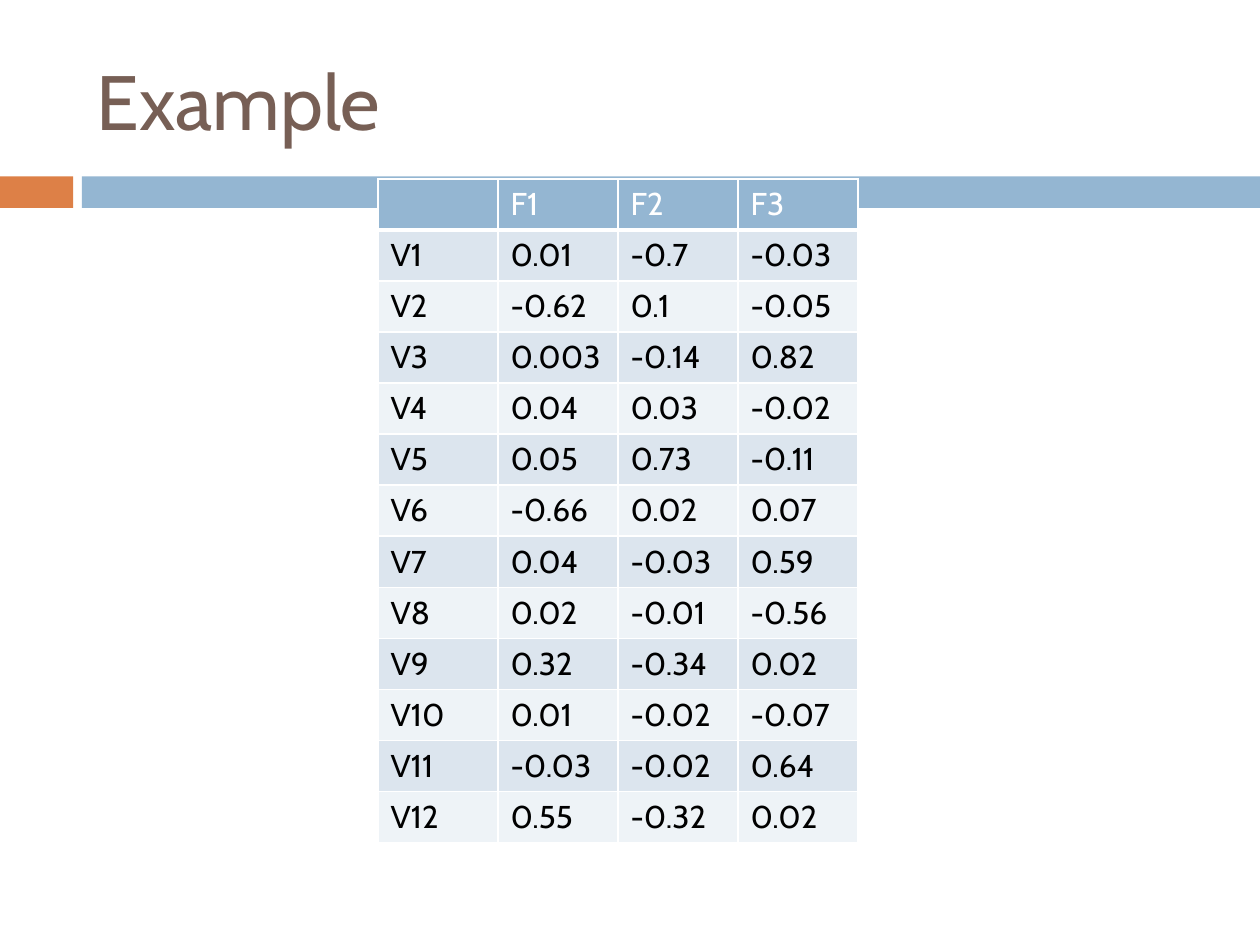
import pptx
import pptx.dml.color
import pptx.enum.shapes
import pptx.enum.text
import pptx.oxml
import pptx.oxml.ns
import pptx.util
from pptx.util import Inches

FONT = "Cabin"
COLORS = {
    "title": "775F55",
    "accent": "DD8047",
    "band": "94B6D2",
    "odd row": "DCE5EE",
    "even row": "EEF3F7",
    "white": "FFFFFF",
    "black": "000000",
}
LOADINGS = [
    ("", "F1", "F2", "F3"),
    ("V1", "0.01", "-0.7", "-0.03"),
    ("V2", "-0.62", "0.1", "-0.05"),
    ("V3", "0.003", "-0.14", "0.82"),
    ("V4", "0.04", "0.03", "-0.02"),
    ("V5", "0.05", "0.73", "-0.11"),
    ("V6", "-0.66", "0.02", "0.07"),
    ("V7", "0.04", "-0.03", "0.59"),
    ("V8", "0.02", "-0.01", "-0.56"),
    ("V9", "0.32", "-0.34", "0.02"),
    ("V10", "0.01", "-0.02", "-0.07"),
    ("V11", "-0.03", "-0.02", "0.64"),
    ("V12", "0.55", "-0.32", "0.02"),
]


def color(name):
    return pptx.dml.color.RGBColor.from_string(COLORS[name])


def style_paragraph(paragraph, size, color_name):
    font = paragraph.font
    font.name = FONT
    font.size = pptx.util.Pt(size)
    font.bold = False
    font.color.rgb = color(color_name)


def add_bar(page, left, width, color_name):
    bar = page.shapes.add_shape(
        pptx.enum.shapes.MSO_SHAPE.RECTANGLE,
        Inches(left), Inches(1.4), Inches(width), Inches(0.25))
    bar.shadow.inherit = False
    bar.fill.solid()
    bar.fill.fore_color.rgb = color(color_name)
    bar.line.fill.background()


def add_title(page, text):
    box = page.shapes.add_textbox(Inches(0.67), Inches(0.25), Inches(8.92), Inches(1.08))
    frame = box.text_frame
    frame.word_wrap = True
    frame.vertical_anchor = pptx.enum.text.MSO_ANCHOR.MIDDLE
    frame.text = text
    style_paragraph(frame.paragraphs[0], 44, "title")


def set_borders(cell, bottom):
    """Draw white cell borders, 1 pt except for the given bottom width."""
    properties = cell._tc.get_or_add_tcPr()
    for side, points in (("L", 1), ("R", 1), ("T", 1), ("B", bottom)):
        properties.append(pptx.oxml.parse_xml(
            f'<a:ln{side} {pptx.oxml.ns.nsdecls("a")} w="{pptx.util.Pt(points)}">'
            f'<a:solidFill><a:srgbClr val="{COLORS["white"]}"/></a:solidFill>'
            f'</a:ln{side}>'))


def add_loadings_table(page, rows):
    column_count = len(rows[0])
    frame = page.shapes.add_table(
        len(rows), column_count, Inches(3), Inches(1.42), Inches(3.81), Inches(5.27))
    for row_index, values in enumerate(rows):
        is_header = row_index == 0
        fill = "band" if is_header else "odd row" if row_index % 2 else "even row"
        for column_index, value in enumerate(values):
            cell = frame.table.cell(row_index, column_index)
            cell.text = value
            style_paragraph(cell.text_frame.paragraphs[0], 18,
                            "white" if is_header else "black")
            set_borders(cell, 3 if is_header else 1)
            cell.fill.solid()
            cell.fill.fore_color.rgb = color(fill)


def main():
    deck = pptx.Presentation()
    deck.slide_width, deck.slide_height = Inches(10), Inches(7.5)
    page = deck.slides.add_slide(deck.slide_layouts[6])
    add_bar(page, 0, 0.58, "accent")
    add_bar(page, 0.65, 9.35, "band")
    add_title(page, "Example")
    add_loadings_table(page, LOADINGS)
    deck.save("out.pptx")


if __name__ == "__main__":
    main()
